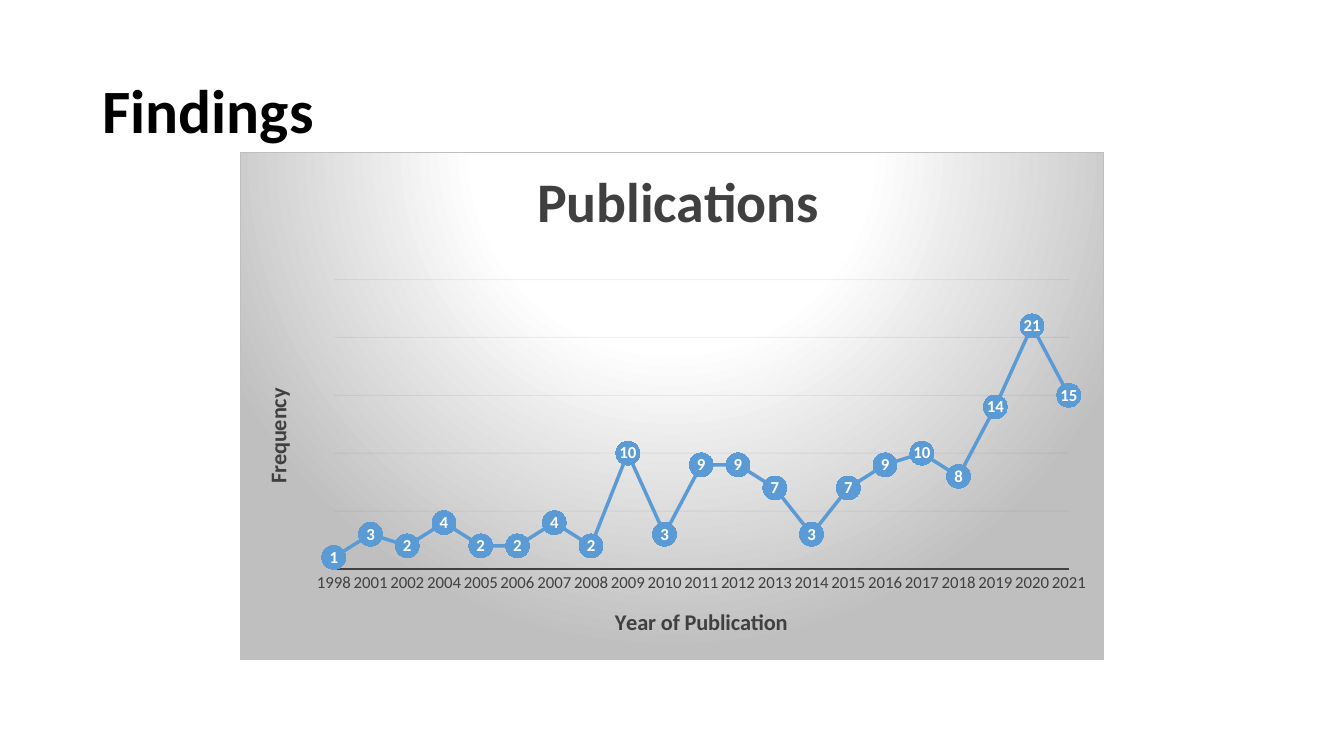
from lxml.etree import SubElement
from pptx import Presentation
from pptx.chart.data import CategoryChartData
from pptx.dml.color import RGBColor
from pptx.enum.chart import XL_CHART_TYPE, XL_LABEL_POSITION, XL_MARKER_STYLE, XL_TICK_MARK
from pptx.enum.text import MSO_ANCHOR, PP_ALIGN
from pptx.oxml import parse_xml
from pptx.oxml.ns import nsdecls, qn
from pptx.util import Cm, Pt

FONT = "Calibri"
DARK, BLUE, GREY, WHITE = "404040", "5B9BD5", "BFBFBF", "FFFFFF"
PUBLICATIONS = {
    "1998": 1, "2001": 3, "2002": 2, "2004": 4, "2005": 2, "2006": 2, "2007": 4,
    "2008": 2, "2009": 10, "2010": 3, "2011": 9, "2012": 9, "2013": 7, "2014": 3,
    "2015": 7, "2016": 9, "2017": 10, "2018": 8, "2019": 14, "2020": 21, "2021": 15,
}


def set_color(color_format, value):
    color_format.rgb = RGBColor.from_string(value)


def set_font(font, size, color, bold=False):
    font.name, font.size, font.bold = FONT, Pt(size), bold
    set_color(font.color, color)


def set_line(line, color, width):
    set_color(line.color, color)
    line.width = Pt(width)


def make_layout(**percentages):
    """Return a manual chart layout with positions in percent of the chart."""
    layout = parse_xml(f"<c:layout {nsdecls('c')}><c:manualLayout/></c:layout>")
    manual = layout[0]
    if "w" in percentages:
        SubElement(manual, qn("c:layoutTarget"), val="inner")
    for name in ("x", "y"):
        SubElement(manual, qn(f"c:{name}Mode"), val="edge")
    for name, value in percentages.items():
        SubElement(manual, qn(f"c:{name}"), val=str(value / 100))
    return layout


def remove_layout(parent):
    for layout in parent.findall(qn("c:layout")):
        parent.remove(layout)


def add_caption(title, text, size, x, y):
    """Fill and place a chart title or an axis title."""
    span = title.text_frame.paragraphs[0].add_run()
    span.text = text
    set_font(span.font, size, DARK, bold=True)
    remove_layout(title.element)
    title.element.find(qn("c:tx")).addnext(make_layout(x=x, y=y))


def fill_background(chart):
    """Give the chart area a radial gradient and a thin border."""
    stops = "".join(
        f'<a:gs pos="{position * 1000}"><a:srgbClr val="{color}"/></a:gs>'
        for position, color in ((0, WHITE), (39, WHITE), (100, GREY))
    )
    area = parse_xml(
        f"<c:spPr {nsdecls('c', 'a')}><a:gradFill><a:gsLst>{stops}</a:gsLst>"
        '<a:path path="circle"><a:fillToRect l="50000" t="-80000" r="50000" b="180000"/></a:path>'
        f'</a:gradFill><a:ln w="{Pt(0.75)}"><a:solidFill><a:srgbClr val="{GREY}"/></a:solidFill></a:ln>'
        "</c:spPr>"
    )
    chart.element.find(qn("c:chart")).addnext(area)


def add_heading(page, text):
    box = page.shapes.title
    box.left, box.top, box.width, box.height = Cm(2.33), Cm(1.02), Cm(29.21), Cm(3.68)
    box.text_frame.vertical_anchor = MSO_ANCHOR.MIDDLE
    para = box.text_frame.paragraphs[0]
    para.alignment, para.line_spacing = PP_ALIGN.LEFT, 0.9
    span = para.add_run()
    span.text = text
    set_font(span.font, 44, "000000", bold=True)


def format_axes(chart):
    years, frequency = chart.category_axis, chart.value_axis
    years.major_tick_mark = years.minor_tick_mark = XL_TICK_MARK.NONE
    set_font(years.tick_labels.font, 12, DARK)
    set_line(years.format.line, DARK, 1.5)
    add_caption(years.axis_title, "Year of Publication", 16, 42.9, 88.8)

    frequency.visible = False
    frequency.minimum_scale, frequency.maximum_scale, frequency.major_unit = 0, 25, 5
    add_caption(frequency.axis_title, "Frequency", 16, 2.1, 45.7)
    set_line(frequency.major_gridlines.format.line, "0D0D0D", 0.75)


def format_series(series):
    series.smooth = False
    set_line(series.format.line, BLUE, 2.5)
    marker = series.marker
    marker.style, marker.size = XL_MARKER_STYLE.CIRCLE, 17
    marker.format.fill.solid()
    set_color(marker.format.fill.fore_color, BLUE)
    marker.format.line.fill.background()
    labels = series.data_labels
    labels.show_value = True
    labels.position = XL_LABEL_POSITION.CENTER
    set_font(labels.font, 12, WHITE, bold=True)


def arrange_plot_area(chart):
    """Place the plot, start the line on the axis and fade the gridlines."""
    plot_area = chart.element.find(qn("c:chart")).find(qn("c:plotArea"))
    remove_layout(plot_area)
    plot_area.insert(0, make_layout(x=10.8, y=25, w=85.2, h=57.1))
    value_axis = plot_area.find(qn("c:valAx"))
    crossing = value_axis.find(qn("c:crossBetween"))
    if crossing is None:
        crossing = parse_xml(f"<c:crossBetween {nsdecls('c')}/>")
        value_axis.find(qn("c:crosses")).addnext(crossing)
    crossing.set("val", "midCat")
    for color in value_axis.find(qn("c:majorGridlines")).iter(qn("a:srgbClr")):
        SubElement(color, qn("a:alpha"), val="6000")


def add_publication_chart(page):
    data = CategoryChartData()
    data.categories = list(PUBLICATIONS)
    data.add_series("Series 1", list(PUBLICATIONS.values()))
    chart = page.shapes.add_chart(
        XL_CHART_TYPE.LINE_MARKERS, Cm(6.05), Cm(3.84), Cm(21.77), Cm(12.8), data
    ).chart
    set_font(chart.font, 12, "000000")
    chart.has_legend = False
    chart.plots[0].vary_by_categories = False
    add_caption(chart.chart_title, "Publications", 40, 33.2, 0.1)
    format_axes(chart)
    format_series(chart.plots[0].series[0])
    fill_background(chart)
    arrange_plot_area(chart)


def main():
    deck = Presentation()
    deck.slide_width, deck.slide_height = Cm(33.87), Cm(19.05)
    page = deck.slides.add_slide(deck.slide_layouts[5])
    add_heading(page, "Findings")
    add_publication_chart(page)
    deck.save("out.pptx")


if __name__ == "__main__":
    main()
